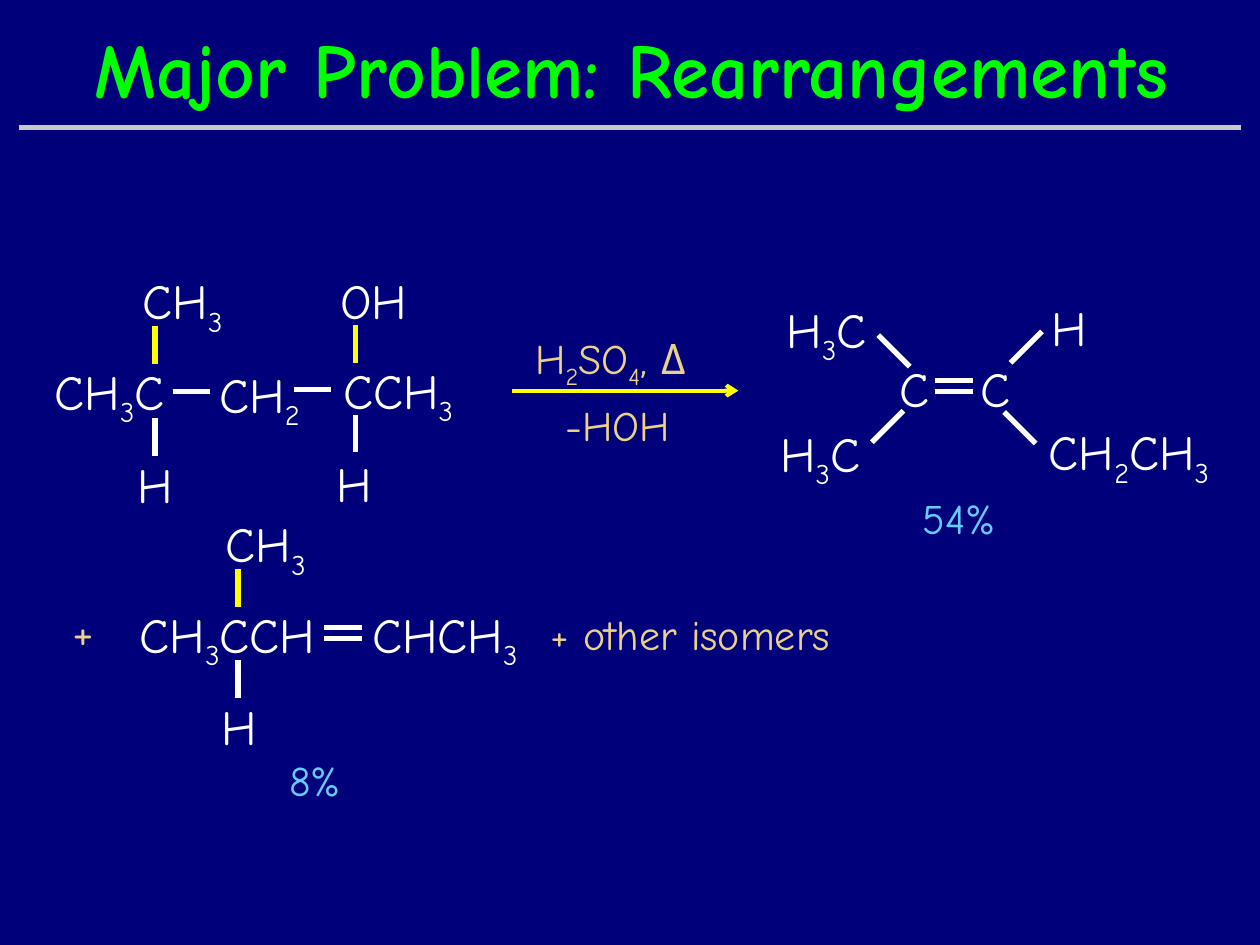
from lxml import etree
from pptx import Presentation
from pptx.dml.color import RGBColor
from pptx.enum.shapes import MSO_CONNECTOR
from pptx.enum.text import MSO_ANCHOR, MSO_AUTO_SIZE, PP_ALIGN
from pptx.oxml.ns import qn
from pptx.util import Inches, Pt

STRAIGHT = MSO_CONNECTOR.STRAIGHT
MIDDLE = MSO_ANCHOR.MIDDLE
FIT_SHAPE = MSO_AUTO_SIZE.SHAPE_TO_FIT_TEXT
LEFT, CENTER = PP_ALIGN.LEFT, PP_ALIGN.CENTER

COLORS = {
    "background": "00007A",
    "title": "00FF00",
    "rule": "C9C9C9",
    "atom": "FFFFFF",
    "highlight": "FFFF00",
    "reagent": "EBD189",
    "yield": "66CCFF",
}
FONT = "Comic Neue"
WIDTH, HEIGHT = 10, 7.5
BOND = 0.3
SLANT = 0.25
DOUBLE_GAP = 0.09
BOX_HEIGHT = {28: 0.57, 24: 0.5}
DIRECTIONS = {
    "across": (BOND, 0),
    "down": (0, BOND),
    "falling": (SLANT, SLANT),
    "rising": (SLANT, -SLANT),
}

TITLE = "Major Problem: Rearrangements"

# "_" marks the next character as a subscript
MOLECULES = {
    "alcohol": {
        "atoms": [
            ("CH_3C", 0.25, 2.82, 1.24),
            ("CH_2", 1.59, 2.84, 0.94),
            ("CCH_3", 2.58, 2.81, 1.16),
            ("CH_3", 0.98, 2.1, 0.94),
            ("OH", 2.56, 2.1, 0.81),
            ("H", 0.96, 3.56, 0.55),
            ("H", 2.53, 3.55, 0.57),
        ],
        "bonds": [
            ("across", 1.37, 3.11, "atom"),
            ("across", 2.33, 3.09, "atom"),
            ("down", 1.23, 2.59, "highlight"),
            ("down", 1.23, 3.32, "atom"),
            ("down", 2.82, 2.58, "highlight"),
            ("down", 2.82, 3.29, "atom"),
        ],
    },
    "major alkene": {
        "atoms": [
            ("H_3C", 6.09, 2.33, 0.94),
            ("H", 8.2, 2.31, 0.57),
            ("C", 6.94, 2.8, 0.64),
            ("C", 7.58, 2.8, 0.64),
            ("H_3C", 6.04, 3.31, 0.94),
            ("CH_2CH_3", 8.15, 3.3, 1.62),
        ],
        "bonds": [
            ("falling", 6.97, 2.66, "atom"),
            ("rising", 8.02, 2.88, "atom"),
            ("across", 7.42, 3.02, "atom"),
            ("across", 7.42, 3.02 + DOUBLE_GAP, "atom"),
            ("rising", 6.92, 3.51, "atom"),
            ("falling", 7.97, 3.27, "atom"),
        ],
    },
    "minor alkene": {
        "atoms": [
            ("CH_3CCH", 0.96, 4.75, 1.69),
            ("CHCH_3", 2.8, 4.75, 1.46),
            ("CH_3", 1.64, 4.03, 0.94),
            ("H", 1.62, 5.48, 0.55),
        ],
        "bonds": [
            ("across", 2.57, 4.98, "atom"),
            ("across", 2.57, 4.98 + DOUBLE_GAP, "atom"),
            ("down", 1.89, 4.52, "highlight"),
            ("down", 1.89, 5.24, "atom"),
        ],
    },
}

NOTES = [
    ("H_2SO_4, Δ ", 4, 2.59, 1.8, 24, "reagent", CENTER),
    ("-HOH", 4.34, 3.12, 1.12, 24, "reagent", CENTER),
    ("54%", 7.15, 3.86, 0.93, 24, "yield", CENTER),
    ("8%", 2.13, 5.94, 0.74, 24, "yield", CENTER),
    ("+ other isomers", 4.27, 4.78, 3.8, 24, "reagent", LEFT),
    ("+", 0.44, 4.72, 0.44, 28, "reagent", CENTER),
]


def rgb(name):
    return RGBColor.from_string(COLORS[name])


def formula_pieces(formula):
    first, *rest = formula.split("_")
    pieces = [(first, False)]
    for part in rest:
        pieces += [(part[0], True), (part[1:], False)]
    return [piece for piece in pieces if piece[0]]


def add_run(paragraph, text, size, color, bold=False, subscript=False):
    run = paragraph.add_run()
    run.text = text
    run.font.name = FONT
    run.font.size = Pt(size)
    run.font.bold = bold
    run.font.color.rgb = rgb(color)
    if subscript:
        run.font._element.set("baseline", "-25000")


def add_formula(shapes, formula, left, top, width, size=28, color="atom", align=CENTER):
    box = shapes.add_textbox(
        Inches(left), Inches(top), Inches(width), Inches(BOX_HEIGHT[size])
    )
    frame = box.text_frame
    frame.word_wrap = True
    frame.auto_size = FIT_SHAPE
    paragraph = frame.paragraphs[0]
    paragraph.alignment = align
    for text, subscript in formula_pieces(formula):
        add_run(paragraph, text, size, color, subscript=subscript)


def add_line(shapes, start, end, color, weight=3, arrow=False):
    points = [Inches(value) for value in (*start, *end)]
    connector = shapes.add_connector(STRAIGHT, *points)
    connector.line.color.rgb = rgb(color)
    connector.line.width = Pt(weight)
    if arrow:
        outline = connector.line._get_or_add_ln()
        etree.SubElement(outline, qn("a:tailEnd"), type="arrow")
    etree.SubElement(connector._element.spPr, qn("a:effectLst"))


def add_molecule(slide, molecule):
    shapes = slide.shapes.add_group_shape().shapes
    for direction, x, y, color in molecule["bonds"]:
        dx, dy = DIRECTIONS[direction]
        add_line(shapes, (x, y), (x + dx, y + dy), color)
    for atom in molecule["atoms"]:
        add_formula(shapes, *atom)


def add_title(slide):
    title = slide.shapes.title
    title.left, title.top = Inches(0.11), Inches(-0.09)
    title.width, title.height = Inches(9.81), Inches(1.25)
    frame = title.text_frame
    frame.vertical_anchor = MIDDLE
    paragraph = frame.paragraphs[0]
    paragraph.alignment = CENTER
    add_run(paragraph, TITLE, 44, "title", bold=True)
    add_line(slide.shapes, (0.15, 1.01), (WIDTH - 0.15, 1.01), "rule")


def main():
    presentation = Presentation()
    presentation.slide_width = Inches(WIDTH)
    presentation.slide_height = Inches(HEIGHT)
    slide = presentation.slides.add_slide(presentation.slide_layouts[5])
    fill = slide.background.fill
    fill.solid()
    fill.fore_color.rgb = rgb("background")

    add_title(slide)
    for molecule in MOLECULES.values():
        add_molecule(slide, molecule)
    add_line(slide.shapes, (4.06, 3.1), (5.86, 3.1), "highlight", 2.25, arrow=True)
    for note in NOTES:
        add_formula(slide.shapes, *note)
    presentation.save("out.pptx")


if __name__ == "__main__":
    main()
